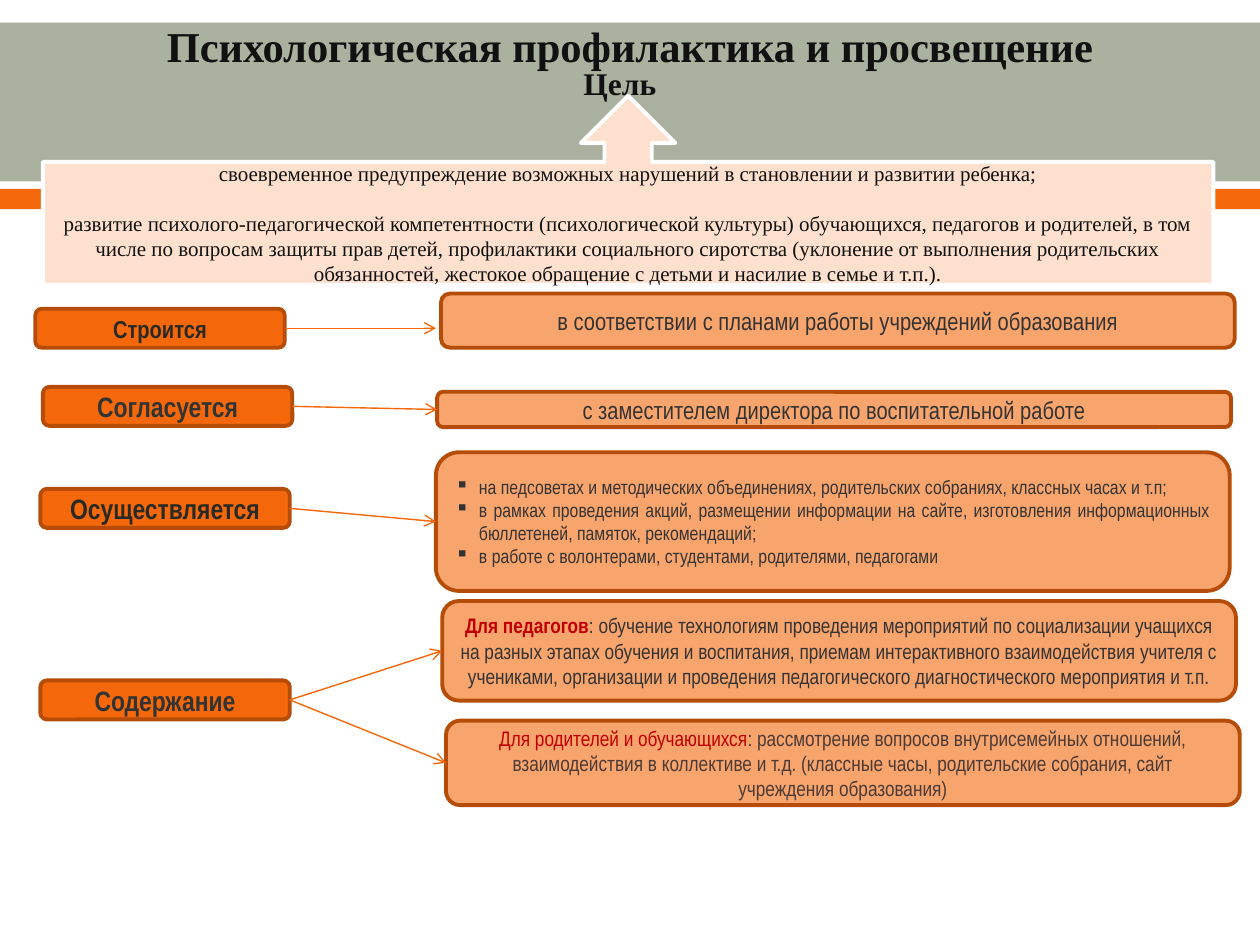
from lxml import etree
from pptx import Presentation
from pptx.dml.color import RGBColor
from pptx.enum.shapes import MSO_CONNECTOR, MSO_SHAPE
from pptx.enum.text import MSO_ANCHOR, MSO_AUTO_SIZE, PP_ALIGN
from pptx.oxml.ns import qn
from pptx.util import Inches, Pt

CENTER, JUSTIFY = PP_ALIGN.CENTER, PP_ALIGN.JUSTIFY
MIDDLE, TOP = MSO_ANCHOR.MIDDLE, MSO_ANCHOR.TOP
RECT, LABEL = MSO_SHAPE.RECTANGLE, MSO_SHAPE.ROUNDED_RECTANGLE
PANEL, CALLOUT = MSO_SHAPE.FLOWCHART_ALTERNATE_PROCESS, MSO_SHAPE.UP_ARROW_CALLOUT
STRAIGHT, NO_AUTOFIT = MSO_CONNECTOR.STRAIGHT, MSO_AUTO_SIZE.NONE

SAGE = RGBColor(0xAB, 0xB1, 0x9F)
ORANGE = RGBColor(0xF4, 0x68, 0x0B)
PEACH = RGBColor(0xF8, 0xA4, 0x6D)
CREAM = RGBColor(0xFD, 0xE1, 0xCE)
RUST = RGBColor(0xB5, 0x4D, 0x08)
WHITE = RGBColor(0xFF, 0xFF, 0xFF)
BLACK = RGBColor(0x11, 0x11, 0x11)
OLIVE = RGBColor(0x2A, 0x2A, 0x25)
GREY = RGBColor(0x33, 0x33, 0x33)
BROWN = RGBColor(0x4B, 0x3A, 0x36)
RED = RGBColor(0xC0, 0x00, 0x00)

SERIF, NARROW = "Times New Roman", "Arial Narrow"
COLS, ROWS = 100, 75
LEFT_SITE, RIGHT_SITE = 1, 3


class Deck:
    """Style and current slide; places are in columns and rows of the grid."""

    def __init__(self):
        self.prs = Presentation()
        self.prs.slide_width, self.prs.slide_height = Inches(10), Inches(7.5)
        self.slide = self.prs.slides.add_slide(self.prs.slide_layouts[5])

    def x(self, col):
        return round(self.prs.slide_width * col / COLS)

    def y(self, row):
        return round(self.prs.slide_height * row / ROWS)

    def box(self, col, row, cols, rows):
        return self.x(col), self.y(row), self.x(cols), self.y(rows)

    def fill_text(self, sp, paragraphs, size, font, align=CENTER, anchor=MIDDLE,
                  gap=0, bullet=None):
        """Each paragraph is a list of (text, colour, bold) runs."""
        tf = sp.text_frame
        tf.word_wrap, tf.auto_size = True, NO_AUTOFIT
        tf.vertical_anchor = anchor
        for i, runs in enumerate(paragraphs):
            p = tf.add_paragraph() if i else tf.paragraphs[0]
            p.alignment = align
            p.space_before = Pt(gap if i else 0)
            if bullet:
                pPr = p._p.get_or_add_pPr()
                indent = Inches(0.19)
                pPr.set("marL", str(indent))
                pPr.set("indent", str(-indent))
                etree.SubElement(pPr, qn("a:buChar")).set("char", bullet)
            for text, color, bold in runs:
                r = p.add_run()
                r.text = text
                r.font.size, r.font.name, r.font.bold = Pt(size), font, bold
                r.font.color.rgb = color

    def title(self, place, text, size):
        sp = self.slide.shapes.title
        sp.left, sp.top, sp.width, sp.height = self.box(*place)
        tf = sp.text_frame
        tf.margin_top = tf.margin_bottom = 0
        self.fill_text(sp, [[(text, BLACK, True)]], size, SERIF)
        # Bring the title in front of the bands
        sp._element.getparent().append(sp._element)

    def text(self, place, text, size):
        sp = self.slide.shapes.add_textbox(*self.box(*place))
        self.fill_text(sp, [[(text, BLACK, True)]], size, SERIF, anchor=TOP)

    def shape(self, kind, place, fill, line=None):
        sp = self.slide.shapes.add_shape(kind, *self.box(*place))
        sp.shadow.inherit = False
        sp.fill.solid()
        sp.fill.fore_color.rgb = fill
        if line is None:
            sp.line.fill.background()
        else:
            sp.line.color.rgb = line
            sp.line.width = Pt(2.22)
        return sp

    def label(self, col, row, text, size, color):
        sp = self.shape(LABEL, (col, row, 19.8, 3.1), ORANGE, RUST)
        self.fill_text(sp, [[(text, color, True)]], size, NARROW)
        return sp

    def panel(self, col, row, rows, paragraphs, size, **style):
        sp = self.shape(PANEL, (col, row, 63, rows), PEACH, RUST)
        self.fill_text(sp, paragraphs, size, NARROW, **style)
        return sp

    def arrow(self, label, panel=None, end_col=0):
        """Arrow from a label to a panel, or level to a given column."""
        middle = label.top + label.height // 2
        cx = self.slide.shapes.add_connector(
            STRAIGHT, label.left + label.width, middle, self.x(end_col), middle)
        cx.begin_connect(label, RIGHT_SITE)
        if panel is not None:
            cx.end_connect(panel, LEFT_SITE)
        cx.line.color.rgb = ORANGE
        cx.line.width = Pt(0.79)
        spPr = cx._element.spPr
        etree.SubElement(spPr.find(qn("a:ln")), qn("a:tailEnd")).set("type", "arrow")
        etree.SubElement(spPr, qn("a:effectLst"))


def main():
    deck = Deck()

    # Header bands, title and goal
    deck.shape(RECT, (0, 1.8, 100, 12.6), SAGE)
    deck.shape(RECT, (0, 15, 100, 1.6), ORANGE)
    deck.title((5, 2, 90, 3.2), "Психологическая профилактика и просвещение", 24.3)
    deck.text((1.2, 4.6, 96, 4), "Цель", 18)
    goal = deck.shape(CALLOUT, (3.4, 7.6, 92.9, 15), CREAM, WHITE)
    deck.fill_text(goal, [
        [("своевременное предупреждение возможных нарушений в становлении и "
          "развитии ребенка;", BLACK, False)],
        [("развитие психолого-педагогической компетентности (психологической "
          "культуры) обучающихся, педагогов и родителей, в том числе по вопросам "
          "защиты прав детей, профилактики социального сиротства (уклонение от "
          "выполнения родительских обязанностей, жестокое обращение с детьми и "
          "насилие в семье и т.п.).", BLACK, False)],
    ], 12, SERIF, gap=14)

    # Labels on the left
    built = deck.label(2.8, 24.5, "Строится", 14, OLIVE)
    agreed = deck.label(3.4, 30.7, "Согласуется", 16, GREY)
    done = deck.label(3.2, 38.8, "Осуществляется", 16, OLIVE)
    content = deck.label(3.2, 54, "Содержание", 16, GREY)

    # Panels on the right
    deck.panel(35, 23.3, 4.3, [
        [("в соответствии с планами работы учреждений образования", GREY, False)]], 14)
    deputy = deck.panel(34.7, 31.1, 2.8, [
        [("с заместителем директора по воспитательной работе", GREY, False)]], 14)
    activities = deck.panel(34.6, 35.9, 11, [[(text, GREY, False)] for text in (
        "на педсоветах и методических объединениях, родительских собраниях, "
        "классных часах и т.п;",
        "в рамках проведения акций, размещении информации на сайте, изготовления "
        "информационных бюллетеней, памяток, рекомендаций;",
        "в работе с волонтерами, студентами, родителями, педагогами",
    )], 11, align=JUSTIFY, bullet="▪")
    teachers = deck.panel(35.1, 47.7, 7.9, [[
        ("Для педагогов", RED, True),
        (": обучение технологиям проведения мероприятий по социализации учащихся "
         "на разных этапах обучения и воспитания, приемам интерактивного "
         "взаимодействия учителя с учениками, организации и проведения "
         "педагогического диагностического мероприятия и т.п.", GREY, False)]], 12)
    parents = deck.panel(35.4, 57.2, 6.7, [[
        ("Для родителей и обучающихся", RED, False),
        (": рассмотрение вопросов внутрисемейных отношений, взаимодействия в "
         "коллективе и т.д. (классные часы, родительские собрания, сайт "
         "учреждения образования)", BROWN, False)]], 12)

    # Arrows
    deck.arrow(built, end_col=34.6)
    for label, panel in ((agreed, deputy), (done, activities),
                         (content, teachers), (content, parents)):
        deck.arrow(label, panel)

    deck.prs.save("out.pptx")


if __name__ == "__main__":
    main()
